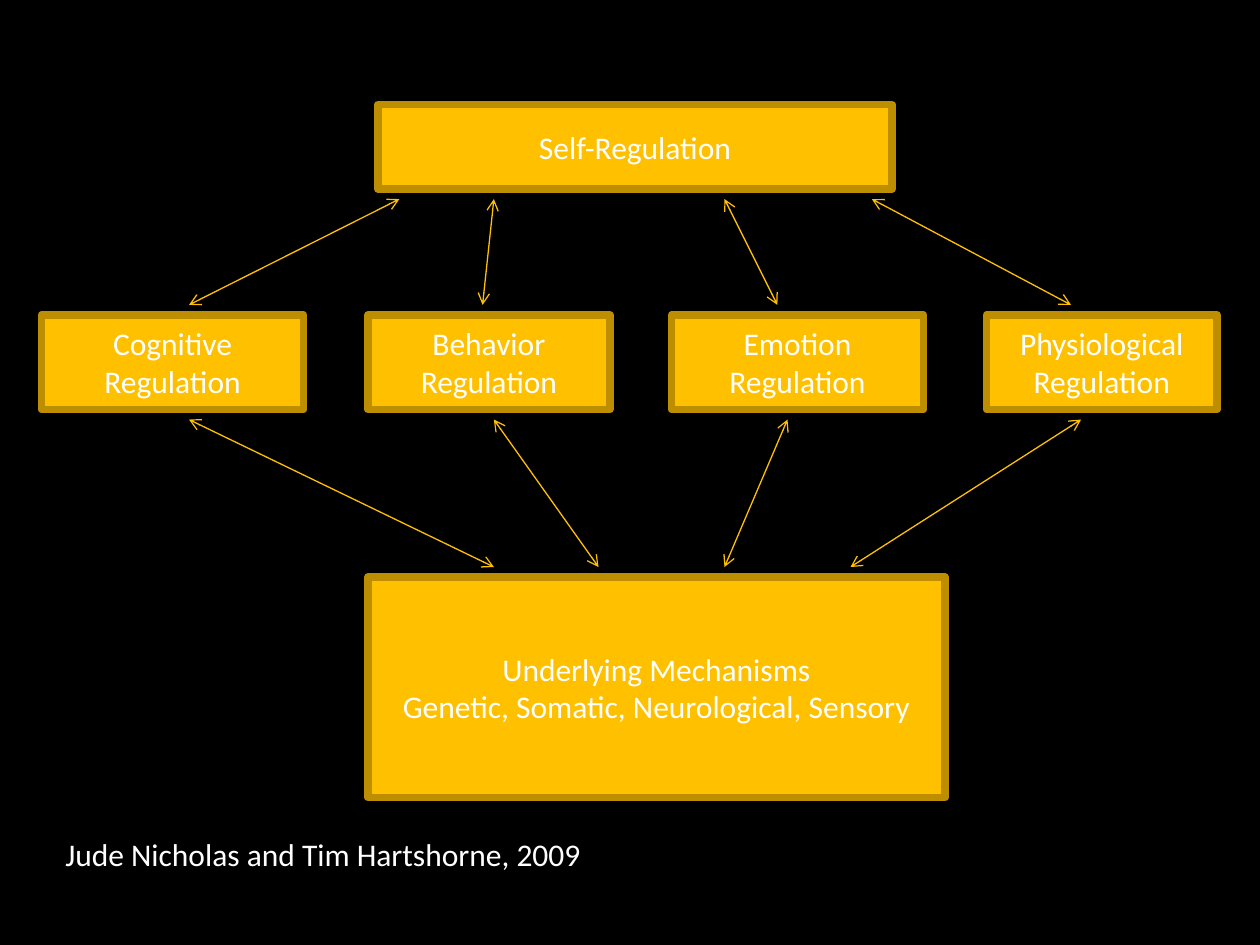
import pptx
import pptx.dml.color
import pptx.enum.shapes
import pptx.enum.text
import pptx.oxml.ns
import pptx.util
from lxml import etree
from pptx.util import Inches

COLORS = {"background": "000000", "gold": "FFC000", "border": "BD8E00", "text": "FFFFFF"}
FONT = "Calibri"

BOXES = [
    (3, 0.83, 4.08, 0.67, ["Self-Regulation"]),
    (0.33, 2.5, 2.08, 0.75, ["Cognitive", "Regulation"]),
    (2.92, 2.5, 1.92, 0.75, ["Behavior", "Regulation"]),
    (5.33, 2.5, 2, 0.75, ["Emotion", "Regulation"]),
    (7.83, 2.5, 1.83, 0.75, ["Physiological", "Regulation"]),
    (2.92, 4.58, 4.58, 1.75,
     ["Underlying Mechanisms", "Genetic, Somatic, Neurological, Sensory"]),
]

ARROW_ROWS = [
    (1.58, 2.42, [(3.17, 1.5), (3.92, 3.83), (5.75, 6.17), (6.92, 8.5)]),
    (3.33, 4.5, [(1.5, 3.92), (3.92, 4.75), (6.25, 5.75), (8.58, 6.75)]),
]


def rgb(name):
    return pptx.dml.color.RGBColor.from_string(COLORS[name])


def write_lines(tf, lines, align):
    tf.word_wrap = True
    for i, line in enumerate(lines):
        p = tf.paragraphs[0] if i == 0 else tf.add_paragraph()
        p.text = line
        p.alignment = align
        p.font.name = FONT
        p.font.size = pptx.util.Pt(18)
        p.font.color.rgb = rgb("text")


def add_box(s, left, top, width, height, lines):
    sp = s.shapes.add_shape(pptx.enum.shapes.MSO_SHAPE.RECTANGLE,
                            Inches(left), Inches(top), Inches(width), Inches(height))
    sp.shadow.inherit = False
    sp.fill.solid()
    sp.fill.fore_color.rgb = rgb("gold")
    sp.line.color.rgb = rgb("border")
    sp.line.width = pptx.util.Pt(4.33)
    sp.text_frame.vertical_anchor = pptx.enum.text.MSO_ANCHOR.MIDDLE
    write_lines(sp.text_frame, lines, pptx.enum.text.PP_ALIGN.CENTER)


def add_double_arrow(s, x1, y1, x2, y2):
    cxn = s.shapes.add_connector(pptx.enum.shapes.MSO_CONNECTOR.STRAIGHT,
                                 Inches(x1), Inches(y1), Inches(x2), Inches(y2))
    cxn.line.color.rgb = rgb("gold")
    cxn.line.width = pptx.util.Pt(0.75)
    ln = cxn.line._get_or_add_ln()
    for end in ("a:headEnd", "a:tailEnd"):
        etree.SubElement(ln, pptx.oxml.ns.qn(end), type="arrow")
    etree.SubElement(cxn._element.spPr, pptx.oxml.ns.qn("a:effectLst"))


def add_credit(s, left, top, width, height, text):
    tb = s.shapes.add_textbox(Inches(left), Inches(top), Inches(width), Inches(height))
    write_lines(tb.text_frame, [text], pptx.enum.text.PP_ALIGN.LEFT)
    tb.text_frame.auto_size = pptx.enum.text.MSO_AUTO_SIZE.SHAPE_TO_FIT_TEXT


def main():
    prs = pptx.Presentation()
    prs.slide_width, prs.slide_height = Inches(10), Inches(7.5)
    s = prs.slides.add_slide(prs.slide_layouts[6])
    s.background.fill.solid()
    s.background.fill.fore_color.rgb = rgb("background")
    for box in BOXES:
        add_box(s, *box)
    for top, bottom, ends in ARROW_ROWS:
        for x1, x2 in ends:
            add_double_arrow(s, x1, top, x2, bottom)
    add_credit(s, 0.42, 6.58, 5.33, 0.4, "Jude Nicholas and Tim Hartshorne, 2009")
    prs.save("out.pptx")


if __name__ == "__main__":
    main()
